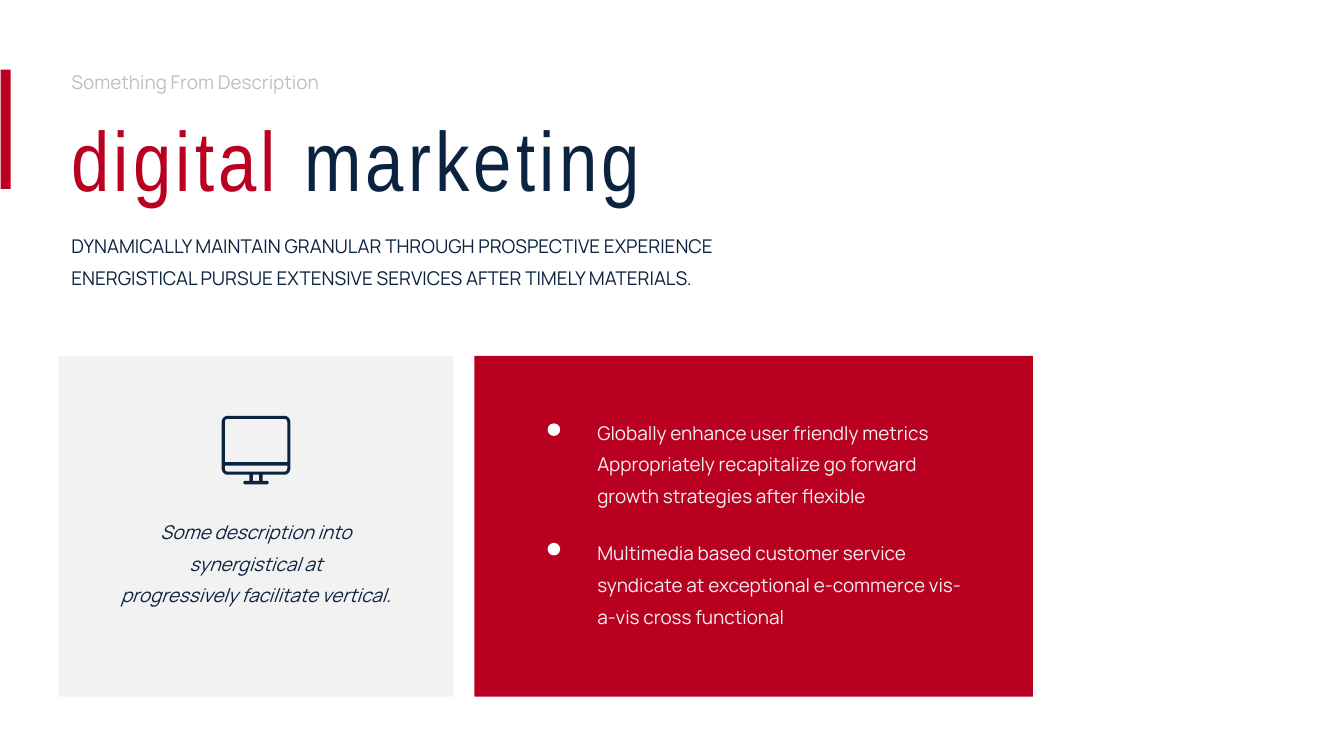
import math
import pptx
import pptx.util
import pptx.dml.color
import pptx.enum.shapes
import pptx.enum.text

RED = pptx.dml.color.RGBColor(0xBA, 0x00, 0x20)
NAVY = pptx.dml.color.RGBColor(0x0C, 0x23, 0x40)
SILVER = pptx.dml.color.RGBColor(0xBF, 0xBF, 0xBF)
PALE = pptx.dml.color.RGBColor(0xF2, 0xF2, 0xF2)
WHITE = pptx.dml.color.RGBColor(0xFF, 0xFF, 0xFF)
RECT = pptx.enum.shapes.MSO_SHAPE.RECTANGLE
OVAL = pptx.enum.shapes.MSO_SHAPE.OVAL
LEFT = pptx.enum.text.PP_ALIGN.LEFT
CENTER = pptx.enum.text.PP_ALIGN.CENTER

deck = pptx.Presentation()
deck.slide_width = pptx.util.Inches(26.66)
deck.slide_height = pptx.util.Inches(15)
slide = deck.slides.add_slide(deck.slide_layouts[5])

# Grid: 100 columns by 100 rows
COL = deck.slide_width / 100
ROW = deck.slide_height / 100
MARGIN = 4.95
CARD_TOP, CARD_HEIGHT = 47.07, 45.07


def add_block(kind, left, top, width, height, color):
    block = slide.shapes.add_shape(kind, round(left * COL), round(top * ROW),
                                   round(width * COL), round(height * ROW))
    block.shadow.inherit = False
    block.fill.solid()
    block.fill.fore_color.rgb = color
    block.line.fill.background()


def add_copy(texts, left, top, width, height, color, align=LEFT, before=0, italic=None):
    frame = slide.shapes.add_textbox(round(left * COL), round(top * ROW),
                                     round(width * COL), round(height * ROW)).text_frame
    frame.word_wrap = True
    frame.auto_size = pptx.enum.text.MSO_AUTO_SIZE.SHAPE_TO_FIT_TEXT
    frame.text = "\n".join(texts)
    for paragraph in frame.paragraphs:
        paragraph.alignment = align
        paragraph.line_spacing = 1.4
        for run in paragraph.runs:
            run.font.name = "Manrope"
            run.font.size = pptx.util.Pt(27)
            run.font.italic = italic
            run.font.color.rgb = color
    frame.paragraphs[-1].space_before = pptx.util.Pt(before)


# Title in two colours
title = slide.shapes.title
title.left, title.top = round(MARGIN * COL), round(16.53 * ROW)
title.width, title.height = round(53.49 * COL), round(12.13 * ROW)
title.text_frame.word_wrap = True
title.text_frame.auto_size = pptx.enum.text.MSO_AUTO_SIZE.SHAPE_TO_FIT_TEXT
title.text_frame.vertical_anchor = pptx.enum.text.MSO_ANCHOR.TOP
headline = title.text_frame.paragraphs[0]
headline.alignment = LEFT
headline.line_spacing = 0.8
for word, color in (("digital ", RED), ("marketing", NAVY)):
    run = headline.add_run()
    run.text = word
    run.font.name = "Arial Narrow"
    run.font.size = pptx.util.Pt(120)
    run.font.color.rgb = color
    run.font._element.set("spc", "600")

# Heading lines and accent bar
add_copy(["Something From Description"], MARGIN, 7.8, 33.46, 4.73, SILVER)
add_block(RECT, 0.04, 9.2, 0.75, 15.8, RED)
add_copy(["DYNAMICALLY MAINTAIN GRANULAR THROUGH PROSPECTIVE EXPERIENCE "
          "ENERGISTICAL PURSUE EXTENSIVE SERVICES AFTER TIMELY MATERIALS."],
         MARGIN, 29.47, 57.88, 8.8, NAVY)

# Cards
add_block(RECT, 35.3, CARD_TOP, 41.56, CARD_HEIGHT, RED)
add_block(RECT, 4.35, CARD_TOP, 29.37, CARD_HEIGHT, PALE)

# Red card: two points with round markers
add_copy(["Globally enhance user friendly metrics Appropriately recapitalize "
          "go forward growth strategies after flexible",
          "Multimedia based customer service syndicate at exceptional "
          "e-commerce vis-a-vis cross functional"],
         44.07, 54.2, 28.43, 29.13, PALE, before=36)
for marker_top in (56, 71.8):
    add_block(OVAL, 40.74, marker_top, 0.94, 1.67, WHITE)

# Grey card: monitor icon on its own grid of 68 units
UNIT = 5.1 * COL / 68
icon_left, icon_top = 16.5 * COL, 55 * ROW
# left, top, right, bottom, radius of top corners, radius of bottom corners
monitor_parts = [
    (0, 0, 68, 58.5, 6, 6),            # body
    (3, 3, 65, 46, 3, 0),              # screen opening
    (3, 49.5, 65, 55.5, 0, 3),         # chin opening
    (27.5, 58.5, 40.5, 64.5, 0, 0),    # stand
    (31, 58.5, 37, 64.5, 0, 0),        # stand opening
    (21.5, 64.5, 46.5, 68, 1.75, 1.75),  # foot
]
monitor = None
for left, top, right, bottom, upper, lower in monitor_parts:
    corners = [(right - upper, top + upper, upper, 270),
               (right - lower, bottom - lower, lower, 0),
               (left + lower, bottom - lower, lower, 90),
               (left + upper, top + upper, upper, 180)]
    outline = [(icon_left + UNIT * (x + radius * math.cos(math.radians(start + turn))),
                icon_top + UNIT * (y + radius * math.sin(math.radians(start + turn))))
               for x, y, radius, start in corners
               for turn in (range(0, 91, 15) if radius else [0])]
    if monitor is None:
        monitor = slide.shapes.build_freeform(*outline[0])
    else:
        monitor.move_to(*outline[0])
    monitor.add_line_segments(outline[1:], close=True)
icon = monitor.convert_to_shape()
icon.shadow.inherit = False
icon.fill.solid()
icon.fill.fore_color.rgb = NAVY
icon.line.fill.background()

add_copy(["Some description into synergistical at\vprogressively facilitate vertical."],
         8.33, 67.33, 21.42, 17.27, NAVY, CENTER, before=24, italic=True)

deck.save("out.pptx")
